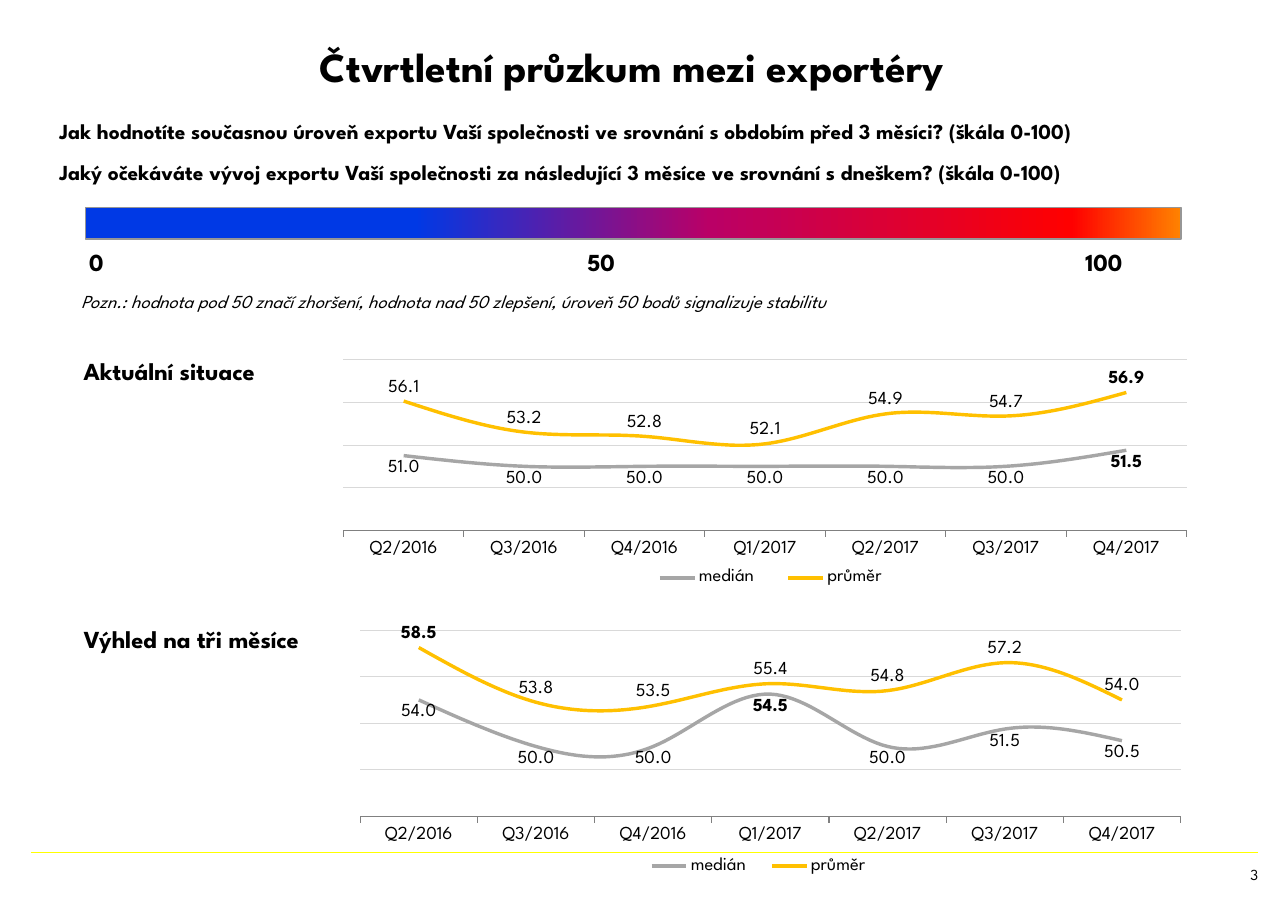
from dataclasses import dataclass
from typing import Any

from lxml.etree import SubElement
from pptx import Presentation
from pptx.chart.data import CategoryChartData as ChartData
from pptx.dml.color import RGBColor
from pptx.enum.chart import XL_CHART_TYPE as ChartType
from pptx.enum.chart import XL_LABEL_POSITION as LabelPos
from pptx.enum.chart import XL_LEGEND_POSITION as LegendPos
from pptx.enum.chart import XL_TICK_MARK as Tick
from pptx.enum.shapes import MSO_CONNECTOR as Connector
from pptx.enum.shapes import MSO_SHAPE as Shape
from pptx.enum.text import MSO_ANCHOR as Anchor
from pptx.enum.text import PP_ALIGN as Align
from pptx.oxml.ns import qn
from pptx.util import Inches, Pt

COLORS = {
    "text": "000000", "rule": "FFFF00", "bar_edge": "969696",
    "grid": "D9D9D9", "axis": "808080", "median": "A6A6A6", "mean": "FFC000",
}
SCALE_STOPS = [(30, "0039E5"), (57, "BA0066"), (90, "FF0000"), (100, "FF8200")]
QUARTERS = ["Q2/2016", "Q3/2016", "Q4/2016", "Q1/2017", "Q2/2017", "Q3/2017", "Q4/2017"]
QUESTIONS = [
    "Jak hodnotíte současnou úroveň exportu Vaší společnosti ve srovnání s obdobím před 3 měsíci? (škála 0-100)",
    "Jaký očekáváte vývoj exportu Vaší společnosti za následující 3 měsíce ve srovnání s dneškem? (škála 0-100)",
]
NOTE = "Pozn.: hodnota pod 50 značí zhoršení, hodnota nad 50 zlepšení, úroveň 50 bodů signalizuje stabilitu"
HEADING_INSETS = (0.12, 0.16, 0.12, 0)
SURVEYS = [
    dict(
        heading="Aktuální situace", heading_row=37.12,
        area=(23.95, 37.12, 69.72, 28.78),
        plot_area=(0.039, 0.081, 0.939, 0.653),
        legend_area=(0.36, 0.85, 0.31, 0.13),
        median=[51, 50, 50, 50, 50, 50, 51.5], median_bold=6,
        mean=[56.1, 53.2, 52.8, 52.1, 54.9, 54.7, 56.9], mean_bold=6,
    ),
    dict(
        heading="Výhled na tři měsíce", heading_row=66.52,
        area=(25.32, 66.26, 67.84, 31.32),
        plot_area=(0.039, 0.093, 0.939, 0.653),
        legend_area=(0.35, 0.87, 0.29, 0.1),
        median=[54, 50, 50, 54.5, 50, 51.5, 50.5], median_bold=3,
        mean=[58.5, 53.8, 53.5, 55.4, 54.8, 57.2, 54], mean_bold=0,
    ),
]


def rgb(name):
    return RGBColor.from_string(COLORS[name])


def set_layout(parent, index, area):
    for old in parent.findall(qn("c:layout")):
        parent.remove(old)
    layout = SubElement(parent, qn("c:layout"))
    parent.insert(index, layout)
    manual = SubElement(layout, qn("c:manualLayout"))
    if index == 0:
        SubElement(manual, qn("c:layoutTarget")).set("val", "inner")
    for mode in ("xMode", "yMode"):
        SubElement(manual, qn(f"c:{mode}")).set("val", "edge")
    for side, share in zip("xywh", area):
        SubElement(manual, qn(f"c:{side}")).set("val", str(share))


@dataclass
class SurveySlide:
    slide: Any
    width: int
    height: int
    font: str = "League Spartan"

    def col(self, count):
        return round(self.width * count / 100)

    def row(self, count):
        return round(self.height * count / 100)

    def box(self, area):
        left, top, width, height = area
        return self.col(left), self.row(top), self.col(width), self.row(height)

    def style_font(self, font, size, bold=False, italic=False):
        font.name, font.size = self.font, Pt(size)
        font.bold, font.italic = bold, italic
        font.color.rgb = rgb("text")

    def fill_text(self, frame, lines, size, insets, align=Align.LEFT, tabs=(), **look):
        frame.word_wrap = True
        frame.margin_left, frame.margin_top, frame.margin_right, frame.margin_bottom = map(Inches, insets)
        frame.text = "\n".join(lines)
        for index, paragraph in enumerate(frame.paragraphs):
            paragraph.alignment = align
            if tabs:
                stops = SubElement(paragraph._p.get_or_add_pPr(), qn("a:tabLst"))
                for stop in tabs:
                    SubElement(stops, qn("a:tab"), pos=str(self.col(stop)), algn="l")
            paragraph.space_before = Pt(10 if index else 0)
            for run in paragraph.runs:
                self.style_font(run.font, size, **look)

    def title(self, text, area):
        heading = self.slide.shapes.title
        heading.left, heading.top, heading.width, heading.height = self.box(area)
        heading.text_frame.vertical_anchor = Anchor.MIDDLE
        self.fill_text(heading.text_frame, [text], 27, (0, 0, 0, 0), Align.CENTER, bold=True)

    def text(self, lines, area, size, insets=HEADING_INSETS, **look):
        frame = self.slide.shapes.add_textbox(*self.box(area)).text_frame
        self.fill_text(frame, lines, size, insets, **look)

    def rule(self, start, end, level):
        line = self.slide.shapes.add_connector(
            Connector.STRAIGHT, self.col(start), self.row(level), self.col(end), self.row(level))
        line.line.color.rgb, line.line.width = rgb("rule"), Pt(1)
        SubElement(line._element.spPr, qn("a:effectLst"))

    def gradient_bar(self, area):
        bar = self.slide.shapes.add_shape(Shape.RECTANGLE, *self.box(area))
        bar.shadow.inherit = False
        bar.line.color.rgb, bar.line.width = rgb("bar_edge"), Pt(0.75)
        bar.fill.gradient()
        bar.fill.gradient_angle = 0
        stops = bar._element.spPr.find(qn("a:gradFill")).find(qn("a:gsLst"))
        for old in list(stops):
            stops.remove(old)
        for percent, color in SCALE_STOPS:
            stop = SubElement(stops, qn("a:gs"), pos=str(percent * 1000))
            SubElement(stop, qn("a:srgbClr"), val=color)

    def chart(self, survey):
        data = ChartData(number_format="0.0")
        data.categories = QUARTERS
        data.add_series("medián", survey["median"])
        data.add_series("průměr", survey["mean"])
        chart = self.slide.shapes.add_chart(ChartType.LINE, *self.box(survey["area"]), data).chart
        chart.has_title = False
        self.style_font(chart.font, 12)
        chart.has_legend = True
        chart.legend.position = LegendPos.BOTTOM
        chart.legend.include_in_layout = False
        self.style_font(chart.legend.font, 12)
        set_layout(chart._chartSpace.chart.plotArea, 0, survey["plot_area"])
        set_layout(chart.legend._element, 1, survey["legend_area"])

        values = chart.value_axis
        values.minimum_scale, values.maximum_scale, values.major_unit = 44, 60, 4
        values.visible = False
        values.major_gridlines.format.line.color.rgb = rgb("grid")
        values.major_gridlines.format.line.width = Pt(0.5)
        quarters = chart.category_axis
        quarters.major_tick_mark, quarters.minor_tick_mark = Tick.OUTSIDE, Tick.NONE
        quarters.format.line.color.rgb = rgb("axis")
        quarters.format.line.width = Pt(0.75)

        chart.plots[0].vary_by_categories = False
        sides = (("median", LabelPos.BELOW, "0.0"), ("mean", LabelPos.ABOVE, "#,##0.0"))
        for series, (measure, side, number_format) in zip(chart.plots[0].series, sides):
            series.smooth = True
            series.format.line.color.rgb = rgb(measure)
            series.format.line.width = Pt(2.25)
            labels = series.data_labels
            labels.show_value, labels.position = True, side
            labels.number_format, labels.number_format_is_linked = number_format, False
            self.style_font(labels.font, 12)
            highlight = series.points[survey[f"{measure}_bold"]].data_label
            self.style_font(highlight.font, 12, bold=True)
            highlight.position = side


def main():
    deck = Presentation()
    deck.slide_width, deck.slide_height = Inches(11.69), Inches(8.27)
    slide = deck.slides.add_slide(deck.slide_layouts[5])
    page = SurveySlide(slide, deck.slide_width, deck.slide_height)

    page.rule(2.4, 97.7, 93.59)
    page.title("Čtvrtletní průzkum mezi exportéry", (5.47, 2.18, 87.17, 10.04))
    page.text(["3"], (57.83, 94.92, 39.86, 5.08), 10, (0, 0, 0, 0), align=Align.RIGHT)
    page.text(QUESTIONS, (3.59, 11, 92.9, 11), 14, bold=True)
    page.gradient_bar((6.67, 22.73, 85.03, 3.51))
    page.text(["0\t50\t100"], (5.9, 25.15, 91.79, 6.05), 16, tabs=(38.67, 77.34), bold=True)
    page.text([NOTE], (5.47, 31.2, 92.73, 3.63), 12, (0.1, 0.05, 0.1, 0.05), italic=True)
    for survey in SURVEYS:
        page.text([survey["heading"]], (5.47, survey["heading_row"], 21.04, 5.5), 16, bold=True)
        page.chart(survey)
    deck.save("out.pptx")


if __name__ == "__main__":
    main()
